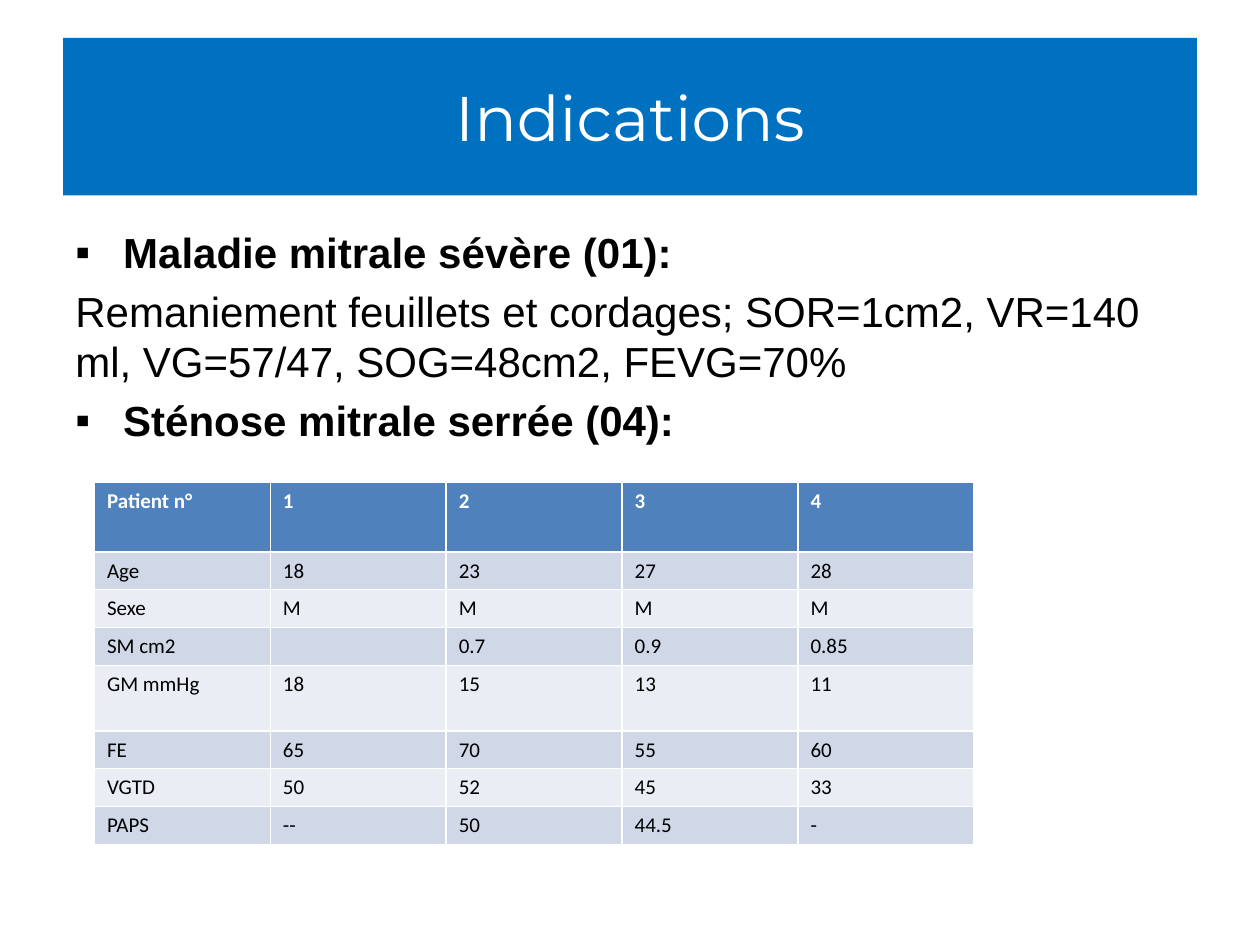
from dataclasses import dataclass

from lxml.etree import SubElement
from pptx import Presentation
from pptx.dml.color import RGBColor
from pptx.enum.text import MSO_ANCHOR, PP_ALIGN
from pptx.oxml.ns import qn
from pptx.util import Inches, Pt


@dataclass(frozen=True)
class Theme:
    banner: str = "0070C0"
    head: str = "4F81BD"
    bands: tuple = ("D0D8E8", "E9EDF4")
    light: str = "FFFFFF"
    dark: str = "000000"
    title: int = 36
    body: int = 24
    cell: int = 12


THEME = Theme()

POINTS = [
    ("Maladie mitrale sévère (01):", True),
    ("Remaniement feuillets et cordages; SOR=1cm2, VR=140 ml, "
     "VG=57/47, SOG=48cm2, FEVG=70%", False),
    ("Sténose mitrale serrée (04):", True),
]

PATIENTS = [
    ("Patient n°", "1", "2", "3", "4"),
    ("Age", "18", "23", "27", "28"),
    ("Sexe", "M", "M", "M", "M"),
    ("SM cm2", "", "0.7", "0.9", "0.85"),
    ("GM mmHg", "18", "15", "13", "11"),
    ("FE", "65", "70", "55", "60"),
    ("VGTD", "50", "52", "45", "33"),
    ("PAPS", "--", "50", "44.5", "-"),
]
TALL = {0: 0.55, 4: 0.52}  # row heights that differ from the usual one
ROW = 0.3


def paint(part, color):
    part.fill.solid()
    part.fill.fore_color.rgb = RGBColor.from_string(color)


def write(para, text, color, **form):
    run = para.add_run()
    run.text = text
    for key, value in form.items():
        setattr(run.font, key, value)
    run.font.color.rgb = RGBColor.from_string(color)


def add_title(slide, box, text):
    title = slide.shapes.title
    for key, value in zip(("left", "top", "width", "height"), box):
        setattr(title, key, Inches(value))
    paint(title, THEME.banner)
    frame = title.text_frame
    frame.vertical_anchor = MSO_ANCHOR.MIDDLE
    para = frame.paragraphs[0]
    para.alignment = PP_ALIGN.CENTER
    write(para, text, THEME.light, name="Montserrat", size=Pt(THEME.title))


def add_bullet(para):
    props = para._p.get_or_add_pPr()
    props.set("marL", str(Inches(0.38)))
    props.set("indent", str(-Inches(0.38)))
    SubElement(props, qn("a:buFont"), typeface="Arial")
    SubElement(props, qn("a:buChar"), char="▪")


def add_points(slide, box, points):
    frame = slide.shapes.add_textbox(*map(Inches, box)).text_frame
    frame.word_wrap = True
    for i, (text, lead) in enumerate(points):
        para = frame.add_paragraph() if i else frame.paragraphs[0]
        para.space_before = Pt(0.2 * THEME.body)
        if lead:
            add_bullet(para)
        write(para, text, THEME.dark, name="Arial",
              size=Pt(THEME.body), bold=lead)


def add_grid(slide, box, rows):
    table = slide.shapes.add_table(
        len(rows), len(rows[0]), *map(Inches, box)).table
    for r, row in enumerate(rows):
        table.rows[r].height = Inches(TALL.get(r, ROW))
        head = r == 0
        for c, text in enumerate(row):
            cell = table.cell(r, c)
            paint(cell, THEME.head if head else THEME.bands[(r - 1) % 2])
            para = cell.text_frame.paragraphs[0]
            if text:
                write(para, text, THEME.light if head else THEME.dark,
                      name="Calibri", size=Pt(THEME.cell), bold=head)
            else:
                # A blank cell needs its own size to keep the row low
                SubElement(para._p, qn("a:endParaRPr"),
                           sz=str(THEME.cell * 100))


def main():
    deck = Presentation()
    deck.slide_width, deck.slide_height = Inches(10), Inches(7.5)
    slide = deck.slides.add_slide(deck.slide_layouts[5])  # title only

    # Banner, findings, then patient data
    add_title(slide, (0.5, 0.3, 9, 1.25), "Indications")
    add_points(slide, (0.5, 1.75, 9, 4.95), POINTS)
    add_grid(slide, (0.75, 3.83, 6.98, 2.87), PATIENTS)
    deck.save("out.pptx")


if __name__ == "__main__":
    main()
